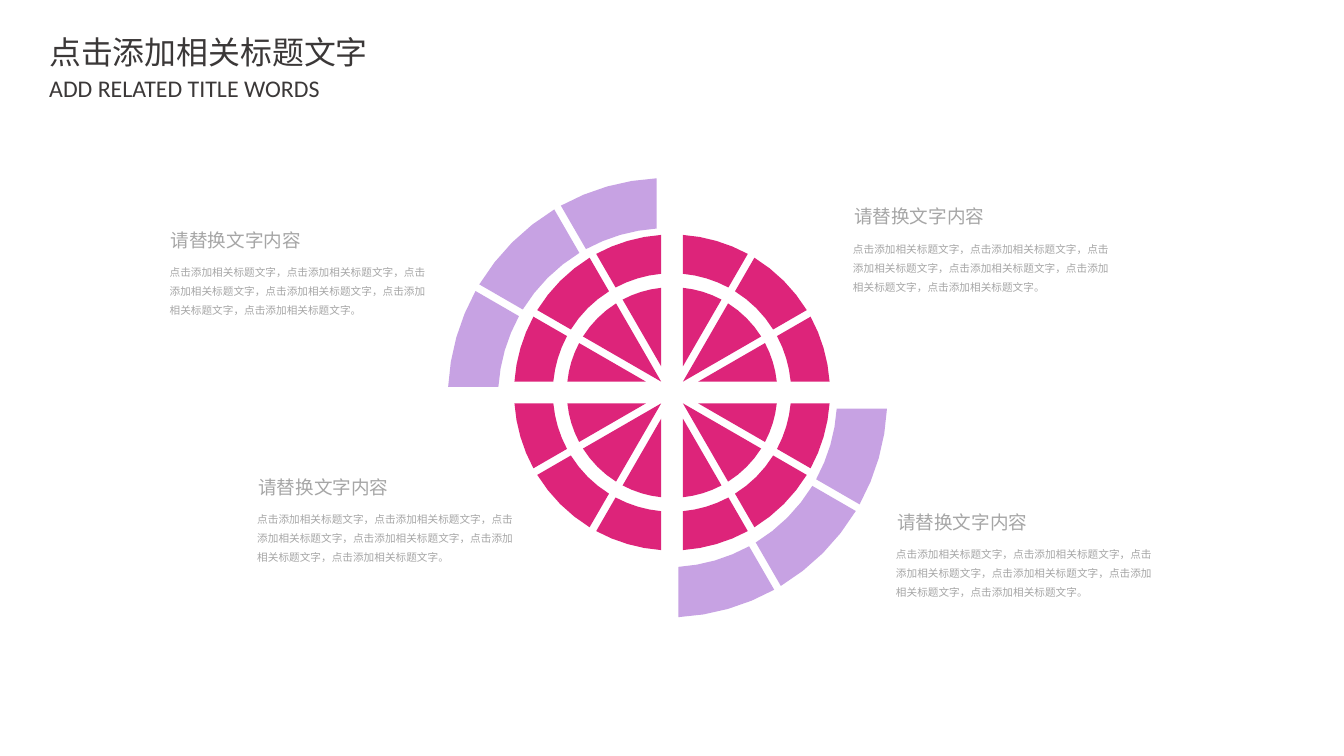
from math import atan2, cos, radians, sin, sqrt

from lxml.etree import SubElement
from pptx import Presentation
from pptx.dml.color import RGBColor
from pptx.enum.text import MSO_AUTO_SIZE
from pptx.oxml.ns import qn
from pptx.util import Pt

# Content
TITLE = "点击添加相关标题文字"
SUBTITLE = "ADD RELATED TITLE WORDS"
HEADING = "请替换文字内容"
BODY = "，".join(["点击添加相关标题文字"] * 6) + "。"
NOTE_CORNERS = [(121, 165.6), (187, 351.4), (635.8, 147.8), (668.2, 378)]

CJK_FONT = "Noto Sans CJK SC"
DARK, GREY = "3B3838", "A6A6A6"
PINK, LILAC = "DD247A", "C7A2E3"

# Rings: centre, inner radius, outer radius, quadrants (x and y direction), colour
ALL_QUADRANTS = [(1, 1), (-1, 1), (1, -1), (-1, -1)]
RINGS = [
    ((502.9, 299.6), 127.7, 165.5, [(1, 1), (-1, -1)], LILAC),
    ((506.3, 295.7), 89.8, 119, ALL_QUADRANTS, PINK),
    ((506.3, 295.7), 0, 79.3, ALL_QUADRANTS, PINK),
]

# Each quadrant holds three wedges: apex, first angle, last angle
GAP = 8.2
SHIFT = 11.5
WEDGES = [
    ((GAP + SHIFT, GAP), 0, 30),
    ((GAP, GAP), 30, 60),
    ((GAP, GAP + SHIFT), 60, 90),
]
ARC_STEPS = 4

presentation = Presentation()
presentation.slide_width = Pt(1012.5)
presentation.slide_height = Pt(569.5)
slide = presentation.slides.add_slide(presentation.slide_layouts[6])


def color(hex_code):
    return RGBColor.from_string(hex_code)


def ray_angle(apex, degrees, radius):
    """Polar angle at which a ray from the apex meets the circle."""
    x, y = apex
    dx, dy = cos(radians(degrees)), sin(radians(degrees))
    along = x * dx + y * dy
    reach = -along + sqrt(along ** 2 + radius ** 2 - x ** 2 - y ** 2)
    return atan2(y + reach * dy, x + reach * dx)


def arc(apex, first, last, radius):
    start = ray_angle(apex, first, radius)
    sweep = ray_angle(apex, last, radius) - start
    angles = [start + sweep * step / ARC_STEPS for step in range(ARC_STEPS + 1)]
    return [(radius * cos(angle), radius * sin(angle)) for angle in angles]


def wedge_outline(apex, first, last, inner, outer):
    inside = arc(apex, first, last, inner)[::-1] if inner else [apex]
    return arc(apex, first, last, outer) + inside


def add_ring(center, inner, outer, quadrants, fill):
    outlines = [
        [(Pt(center[0] + side * x), Pt(center[1] + level * y))
         for x, y in wedge_outline(*wedge, inner, outer)]
        for side, level in quadrants for wedge in WEDGES
    ]
    builder = slide.shapes.build_freeform(*outlines[0][0])
    for number, outline in enumerate(outlines):
        if number:
            builder.move_to(*outline[0])
        builder.add_line_segments(outline[1:], close=True)
    ring = builder.convert_to_shape()
    ring.shadow.inherit = False
    ring.fill.solid()
    ring.fill.fore_color.rgb = color(fill)
    ring.line.fill.background()


def add_text(words, left, top, width, height, size, font, ink,
             inset=7.6, spacing=None, wrap=True):
    frame = slide.shapes.add_textbox(Pt(left), Pt(top), Pt(width), Pt(height)).text_frame
    frame.word_wrap = wrap
    frame.auto_size = MSO_AUTO_SIZE.SHAPE_TO_FIT_TEXT
    frame.margin_left = frame.margin_right = Pt(inset)
    frame.margin_top = frame.margin_bottom = Pt(3.6)
    paragraph = frame.paragraphs[0]
    paragraph.text = words
    paragraph.line_spacing = spacing
    paragraph.font.size = Pt(size)
    paragraph.font.color.rgb = color(ink)
    paragraph.font.name = font
    # East Asian typeface
    defaults = paragraph._p.pPr.find(qn("a:defRPr"))
    SubElement(defaults, qn("a:ea")).set("typeface", CJK_FONT)


# Wheel
for ring_parts in RINGS:
    add_ring(*ring_parts)

# Notes around the wheel
for left, top in NOTE_CORNERS:
    add_text(BODY, left, top + 26.6, 208.8, 50.4, 8, CJK_FONT, GREY,
             inset=6.8, spacing=1.5)
    add_text(HEADING, left, top, 191.5, 28.1, 14, "Arial", GREY, spacing=1.2)

# Title
add_text(TITLE, 29.5, 20.9, 257.8, 36.7, 24, CJK_FONT, DARK, wrap=False)
add_text(SUBTITLE, 29.5, 51.8, 221, 29.5, 18, "Calibri", DARK, wrap=False)

presentation.save("out.pptx")
